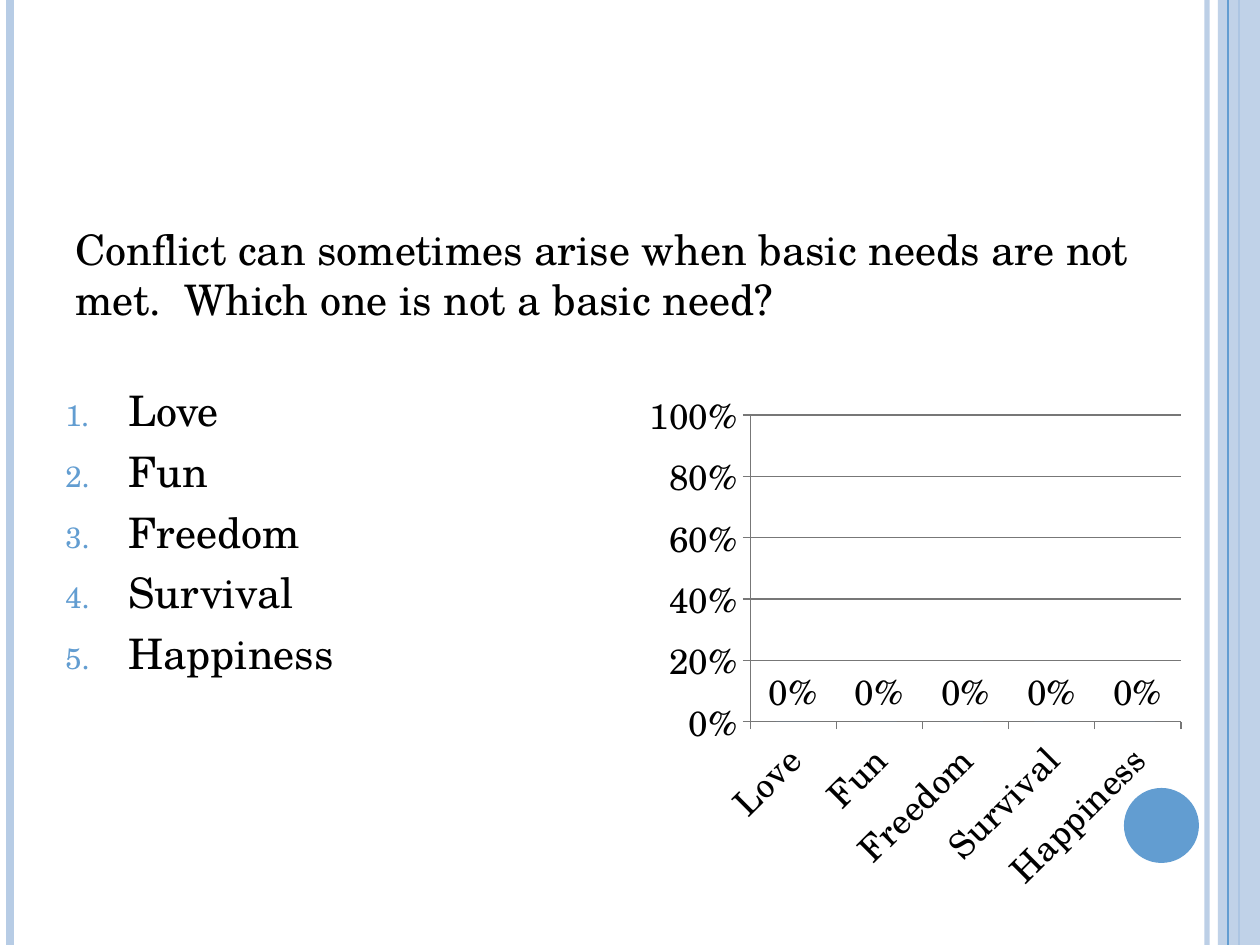
from dataclasses import dataclass

from lxml import etree
from pptx import Presentation
from pptx import util as u
from pptx.chart.data import CategoryChartData
from pptx.dml.color import RGBColor
from pptx.enum import chart as ch, shapes, text
from pptx.oxml import parse_xml
from pptx.oxml.ns import nsdecls, qn


@dataclass(frozen=True)
class Theme:
    font: str = "TeX Gyre Schola"
    ink: str = "000000"
    blue: str = "629DD1"
    pale: str = "B7CCE5"
    grid: str = "777777"
    body: int = 24
    label: int = 20


T = Theme()
SCALE = 914400 / 126
NEEDS = ["Love", "Fun", "Freedom", "Survival", "Happiness"]


def px(n):
    return u.Emu(round(n * SCALE))


def place(box):
    return [px(n) for n in box]


def rgb(code):
    return RGBColor.from_string(code)


def style(font, size):
    font.name, font.size, font.bold = T.font, u.Pt(size), False
    font.color.rgb = rgb(T.ink)


def fade(fill, alpha):
    tone = fill._xPr.find(".//" + qn("a:srgbClr"))
    etree.SubElement(tone, qn("a:alpha"), val=str(alpha * 1000))


def number(para, indent):
    props = para._p.get_or_add_pPr()
    props.set("marL", str(px(indent)))
    props.set("indent", str(-px(indent)))
    tint = etree.SubElement(props, qn("a:buClr"))
    etree.SubElement(tint, qn("a:srgbClr"), val=T.blue)
    etree.SubElement(props, qn("a:buSzPct"), val="70000")
    etree.SubElement(props, qn("a:buFont"), typeface=T.font)
    etree.SubElement(props, qn("a:buAutoNum"), type="arabicPeriod")


def write(shape, lines, size=T.body, before=6, indent=0):
    frame = shape.text_frame
    frame.word_wrap = True
    frame.auto_size = text.MSO_AUTO_SIZE.NONE
    frame.vertical_anchor = text.MSO_ANCHOR.TOP
    for i, line in enumerate(lines):
        para = frame.add_paragraph() if i else frame.paragraphs[0]
        para.alignment = text.PP_ALIGN.LEFT
        para.line_spacing = 1.0
        para.space_before = u.Pt(before)
        run = para.add_run()
        run.text = line
        style(run.font, size)
        if indent:
            number(para, indent)


def stripe(slide, x, high, color, width, alpha=100):
    line = slide.shapes.add_connector(
        shapes.MSO_CONNECTOR.STRAIGHT, px(x), 0, px(x), px(high))
    line.line.color.rgb = rgb(color)
    line.line.width = u.Pt(width)
    if alpha < 100:
        fade(line.line.fill, alpha)
    etree.SubElement(line._element.spPr, qn("a:effectLst"))


def solid(slide, kind, box, color, alpha=100):
    shape = slide.shapes.add_shape(kind, *place(box))
    shape.shadow.inherit = False
    shape.fill.solid()
    shape.fill.fore_color.rgb = rgb(color)
    shape.line.fill.background()
    if alpha < 100:
        fade(shape.fill, alpha)


def frame(slide, box):
    left, top, wide, high = box
    right = left + wide
    kinds = shapes.MSO_SHAPE
    stripe(slide, right - 53, high, T.pale, 3, 93)
    stripe(slide, left + 10, high, T.pale, 4.5)
    stripe(slide, right - 21, high, T.blue, 1.5)
    solid(slide, kinds.RECTANGLE, (right - 42, top, 42, high), T.pale, 87)
    stripe(slide, right - 32, high, T.blue, 0.75)
    solid(slide, kinds.OVAL, (right - 136, top + high - 157, 75, 75), T.blue)


def ask(slide, box):
    title = slide.shapes.title
    title.left, title.top, title.width, title.height = place(box)
    write(title, ["Conflict can sometimes arise when basic needs are not met.  "
                  "Which one is not a basic need?"])


def choices(slide, box):
    write(slide.shapes.add_textbox(*place(box)), NEEDS, indent=63)


def plot(chart, box):
    area = chart._chartSpace.chart.plotArea
    for old in area.findall(qn("c:layout")):
        area.remove(old)
    parts = "".join(f'<c:{k} val="{v}"/>' for k, v in zip("xywh", box))
    area.insert(0, parse_xml(
        f'<c:layout {nsdecls("c")}><c:manualLayout><c:layoutTarget val="inner"/>'
        f'<c:xMode val="edge"/><c:yMode val="edge"/>{parts}'
        '</c:manualLayout></c:layout>'))


def votes(slide, box):
    data = CategoryChartData(number_format="0%")
    data.categories = NEEDS
    data.add_series("Series 1", [0] * len(NEEDS))
    chart = slide.shapes.add_chart(
        ch.XL_CHART_TYPE.COLUMN_CLUSTERED, *place(box), data).chart
    chart.has_legend = chart.has_title = False
    style(chart.font, T.label)
    plot(chart, (0.2, 0.07, 0.78, 0.58))

    cats, vals = chart.category_axis, chart.value_axis
    vals.minimum_scale, vals.maximum_scale, vals.major_unit = 0, 1, 0.2
    vals.has_major_gridlines = True
    vals.tick_labels.number_format = "0%"
    vals.tick_labels.number_format_is_linked = False
    for axis in (cats, vals):
        axis.major_tick_mark = ch.XL_TICK_MARK.OUTSIDE
        style(axis.tick_labels.font, T.label)
    for part in (cats.format, vals.format, vals.major_gridlines.format):
        part.line.color.rgb = rgb(T.grid)
        part.line.width = u.Pt(0.75)
    cats._element.find(qn("c:txPr")).find(qn("a:bodyPr")).set("rot", "-2700000")

    bars = chart.plots[0]
    bars.gap_width = 150
    bars.vary_by_categories = False
    fill = bars.series[0].format.fill
    fill.solid()
    fill.fore_color.rgb = rgb(T.blue)
    tags = bars.series[0].data_labels
    tags.show_value = True
    tags.number_format = "0%"
    tags.number_format_is_linked = False
    tags.position = ch.XL_LABEL_POSITION.OUTSIDE_END
    style(tags.font, T.label)


def main():
    deck = Presentation()
    deck.slide_width, deck.slide_height = px(1260), px(945)
    slide = deck.slides.add_slide(deck.slide_layouts[5])
    frame(slide, (0, 0, 1260, 945))
    ask(slide, (63, 217, 1134, 151))
    choices(slide, (53, 378, 552, 529))
    votes(slide, (640, 378, 552, 529))
    deck.save("out.pptx")


if __name__ == "__main__":
    main()
